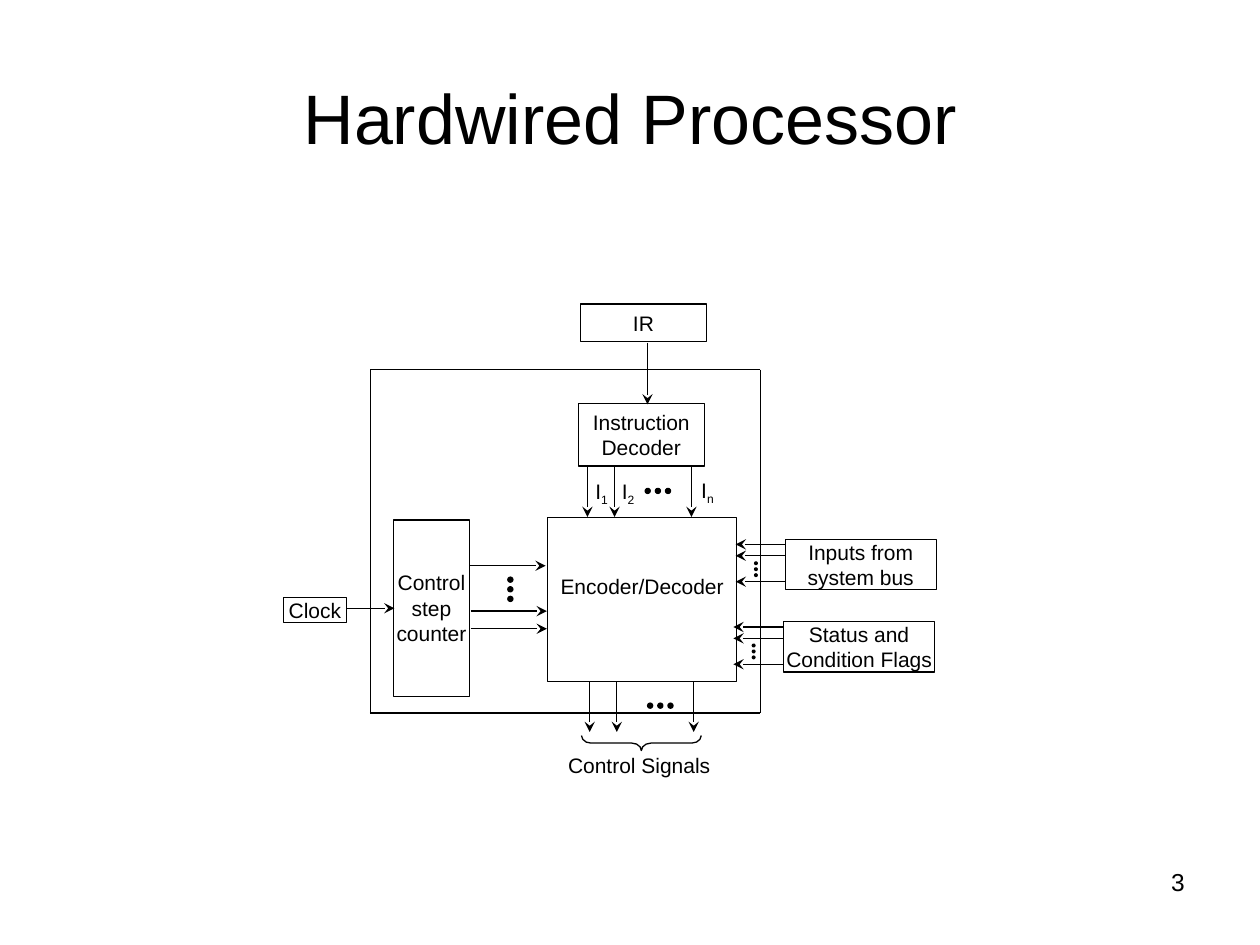
import pptx
import pptx.util
import pptx.dml.color
import pptx.enum.shapes
import pptx.enum.text
import pptx.oxml.ns
import lxml.etree

Pt = pptx.util.Pt
Kind = pptx.enum.shapes.MSO_SHAPE
Align = pptx.enum.text.PP_ALIGN
Anchor = pptx.enum.text.MSO_ANCHOR
qn = pptx.oxml.ns.qn


def hue(code):
    return pptx.dml.color.RGBColor.from_string(code)


def write(shape, text, sub, size, align, form):
    frame = shape.text_frame
    for name, value in form.items():
        setattr(frame, name, value)
    para = frame.paragraphs[0]
    para.alignment = align
    for part in filter(None, (text, sub)):
        run = para.add_run()
        run.text = part
        for name, value in {"name": "Arial", "size": Pt(size)}.items():
            setattr(run.font, name, value)
        run.font.color.rgb = hue("000000")
        if part == sub:
            run._r.get_or_add_rPr().set("baseline", "-25000")


deck = pptx.Presentation()
deck.slide_width, deck.slide_height = Pt(720), Pt(540)
slide = deck.slides.add_slide(deck.slide_layouts[5])
shapes = slide.shapes

title = shapes.title
place = {"left": 36, "top": 21.6, "width": 648, "height": 90}
for name, value in place.items():
    setattr(title, name, Pt(value))
write(title, "Hardwired Processor", "", 40, Align.CENTER,
      {"vertical_anchor": Anchor.MIDDLE, "word_wrap": True})

page = shapes.add_textbox(Pt(516), Pt(492), Pt(168), Pt(37.5))
write(page, "3", "", 14, Align.RIGHT, {"word_wrap": True})

boxes = [
    ("Instruction Decoder", "", 330.5, 230.4, 72, 36, 3.6, "000000"),
    ("Encoder/Decoder", "", 313, 295.7, 108, 93.6, 32, "000000"),
    ("Inputs from system bus", "", 448.7, 308.2, 86.4, 28.8, 0, "000000"),
    ("Status and Condition Flags", "", 447.8, 355.2, 86.4, 28.8, 0, "000000"),
    ("I", "1", 338.4, 273.6, 10.8, 14.4, 0, "FFFFFF"),
    ("I", "2", 353.5, 273.2, 10.8, 14.4, 0, "FFFFFF"),
    ("I", "n", 398.9, 273, 10.8, 14.4, 0, "FFFFFF"),
    ("Control Signals", "", 321.4, 429.8, 87.8, 14.4, 0, "FFFFFF"),
    ("Control step counter", "", 225, 297.2, 43.2, 100.8, 28.5, "000000"),
    ("Clock", "", 162, 341.5, 36, 14.4, 0, "000000"),
    ("IR", "", 331.7, 173.7, 72, 21.6, 3.6, "000000"),
]
for text, sub, x, y, wide, high, inset, edge in boxes:
    box = shapes.add_shape(Kind.RECTANGLE, Pt(x), Pt(y), Pt(wide), Pt(high))
    box.shadow.inherit = False
    box.fill.solid()
    box.fill.fore_color.rgb = hue("FFFFFF")
    box.line.color.rgb = hue(edge)
    box.line.width = Pt(0.75)
    write(box, text, sub, 12, Align.CENTER, {
        "margin_left": 0, "margin_right": 0, "margin_bottom": 0,
        "margin_top": Pt(inset), "word_wrap": True,
        "vertical_anchor": Anchor.TOP})

lines = [
    (269, 359.3, 312.5, 359.3, "tailEnd"),
    (269, 349.2, 312.5, 349.2, "tailEnd"),
    (268.5, 323.3, 311.8, 323.3, "tailEnd"),
    (198, 347.6, 225.4, 347.6, "tailEnd"),
    (370, 195.8, 370, 231.1, "tailEnd"),
    (211.7, 211.2, 434.5, 211.2, ""),
    (211.7, 211.2, 211.7, 407, ""),
    (434.4, 211.2, 434.4, 407.5, ""),
    (211.3, 407.5, 434.4, 407.5, ""),
]
for x, y in ((420.4, 311.1), (419.1, 358.3)):
    for gap in (0, 6.5, 21.3):
        lines.append((x, y + gap, x + 28.8, y + gap, "headEnd"))
for x, y in ((335.7, 266.6), (337, 389.5)):
    for gap in (0, 15.5, 59.4):
        lines.append((x + gap, y, x + gap, y + 28.8, "tailEnd"))
for x, y, right, base, tip in lines:
    line = shapes.add_connector(pptx.enum.shapes.MSO_CONNECTOR.STRAIGHT,
                                Pt(x), Pt(y), Pt(right), Pt(base))
    line.line.color.rgb = hue("000000")
    line.line.width = Pt(0.75)
    props = line._element.spPr
    if tip:
        lxml.etree.SubElement(props.find(qn("a:ln")), qn("a:" + tip),
                              type="stealth")
    lxml.etree.SubElement(props, qn("a:effectLst"))

rows = [
    (431.2, 321.1, 0, 3.4, 1.5),
    (429.9, 368.1, 0, 3.4, 1.5),
    (290.2, 329.8, 0, 5.5, 2.9),
    (368.7, 279.1, 5.8, 0, 2.9),
    (370.1, 401.8, 5.8, 0, 2.9),
]
for x, y, across, down, size in rows:
    for step in range(3):
        dot = shapes.add_shape(Kind.OVAL, Pt(x + step * across),
                               Pt(y + step * down), Pt(size), Pt(size))
        dot.shadow.inherit = False
        dot.fill.solid()
        dot.fill.fore_color.rgb = hue("000000")
        dot.line.color.rgb = hue("000000")
        dot.line.width = Pt(0.75)

brace = shapes.add_shape(Kind.LEFT_BRACE, Pt(362.2), Pt(390.4), Pt(8.6), Pt(68.4))
brace.shadow.inherit = False
brace.rotation = 270
brace.adjustments[0] = 0.63
brace.fill.background()
brace.line.color.rgb = hue("000000")
brace.line.width = Pt(0.75)

deck.save("out.pptx")
